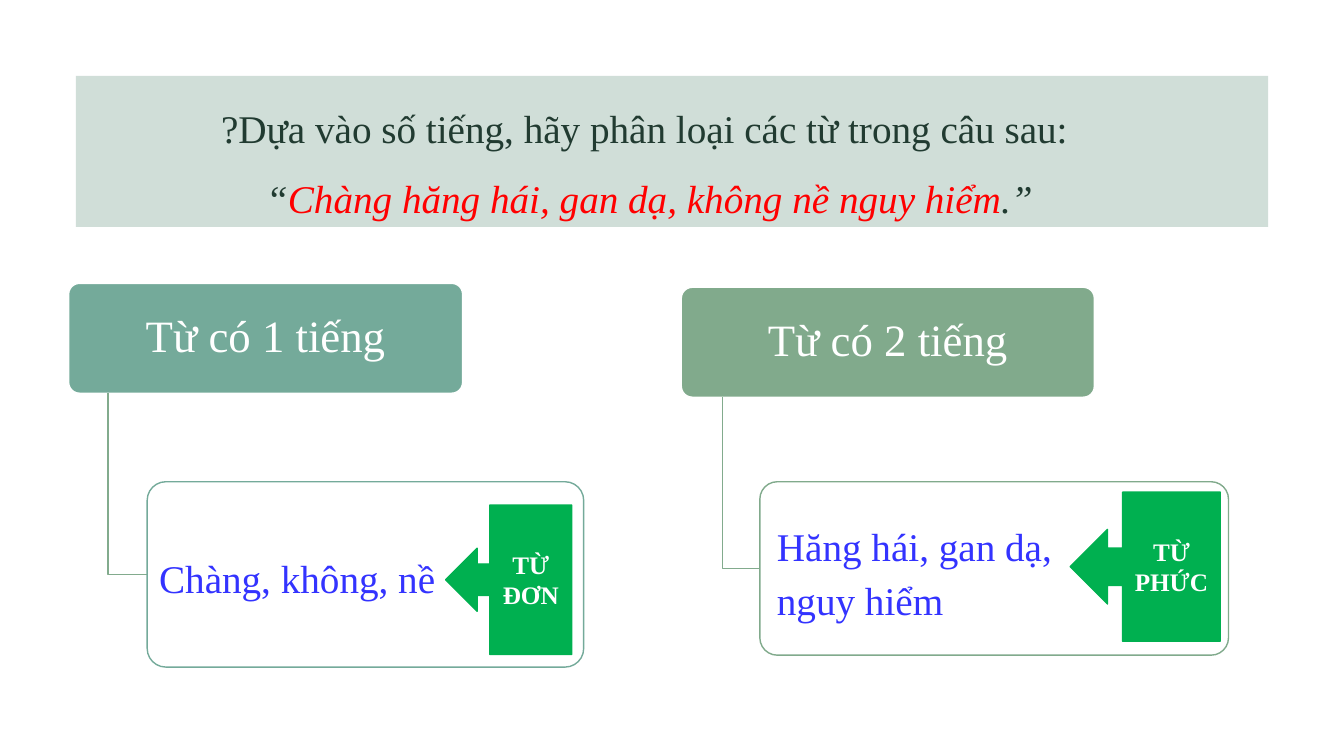
from dataclasses import dataclass

from lxml.etree import SubElement
from pptx import Presentation
from pptx.dml.color import RGBColor
from pptx.enum.shapes import MSO_SHAPE
from pptx.enum.text import MSO_ANCHOR, PP_ALIGN
from pptx.oxml.ns import qn
from pptx.shapes.autoshape import Shape
from pptx.slide import Slide
from pptx.text.text import TextFrame, _Paragraph
from pptx.util import Cm, Pt

FONT = "Times New Roman"
WHITE, GREEN, DARK = "FFFFFF", "00B050", "213B31"
RED, BLUE, ELBOW = "FF0000", "3333FF", "82AB8D"


@dataclass(frozen=True)
class Area:
    """Left, top, width and height in centimetres."""
    left: float
    top: float
    width: float
    height: float

    def lengths(self) -> tuple[Cm, Cm, Cm, Cm]:
        return Cm(self.left), Cm(self.top), Cm(self.width), Cm(self.height)


@dataclass(frozen=True)
class WordGroup:
    title: str
    color: str
    title_area: Area
    detail_area: Area
    words: list[str]
    words_area: Area
    wrap: bool
    kind: str
    kind_area: Area


GROUPS = [
    WordGroup("Từ có 1 tiếng", "74AA9A", Area(1.73, 7.14, 9.93, 2.77),
              Area(3.71, 12.14, 11, 4.67), ["Chàng, không, nề"],
              Area(3.76, 13.97, 7.54, 1.35), False,
              "TỪ ĐƠN", Area(11.23, 12.73, 3.18, 3.76)),
    WordGroup("Từ có 2 tiếng", "81AA8C", Area(17.17, 7.24, 10.41, 2.77),
              Area(19.15, 12.14, 11.81, 4.37), ["Hăng hái, gan dạ,", "nguy hiểm"],
              Area(19.33, 13.16, 8.46, 2.69), True,
              "TỪ PHỨC", Area(26.97, 12.4, 3.78, 3.76)),
]


def rgb(color: str) -> RGBColor:
    return RGBColor.from_string(color)


def add_span(para: _Paragraph, text: str, *, size: float, color: str,
             bold: bool = False, italic: bool = False) -> None:
    span = para.add_run()
    span.text = text
    font = span.font
    font.name, font.size, font.bold, font.italic = FONT, Pt(size), bold, italic
    font.color.rgb = rgb(color)


def add_box(page: Slide, preset: MSO_SHAPE, area: Area, *, fill: str,
            line: str | None = None, opacity: int = 100) -> Shape:
    box = page.shapes.add_shape(preset, *area.lengths())
    box.shadow.inherit = False
    box.fill.solid()
    box.fill.fore_color.rgb = rgb(fill)
    if opacity < 100:
        color = box.fill._xPr.find(qn("a:solidFill"))[0]
        SubElement(color, qn("a:alpha"), val=str(opacity * 1000))
    if line:
        box.line.color.rgb = rgb(line)
        box.line.width = Pt(1)
    else:
        box.line.fill.background()
    if preset == MSO_SHAPE.ROUNDED_RECTANGLE:
        box.adjustments[0] = 0.1
    return box


def add_label(box: Shape, text: str, *, size: float, bold: bool = False,
              spacing: float = 1.0) -> None:
    """Centre white text in a filled shape."""
    frame = box.text_frame
    frame.word_wrap = True
    frame.vertical_anchor = MSO_ANCHOR.MIDDLE
    para = frame.paragraphs[0]
    para.alignment = PP_ALIGN.CENTER
    para.line_spacing = spacing
    add_span(para, text, size=size, color=WHITE, bold=bold)


def add_text_frame(page: Slide, area: Area, *, wrap: bool = True) -> TextFrame:
    frame = page.shapes.add_textbox(*area.lengths()).text_frame
    frame.word_wrap = wrap
    return frame


def add_elbow(page: Slide, title: Area, detail: Area) -> None:
    """Lead from a tenth along the title's bottom to the detail's left middle."""
    left = Cm(title.left + title.width / 10)
    middle = Cm(detail.top + detail.height / 2)
    builder = page.shapes.build_freeform(left, Cm(title.top + title.height))
    builder.add_line_segments([(left, middle), (Cm(detail.left), middle)], close=False)
    elbow = builder.convert_to_shape()
    elbow.shadow.inherit = False
    elbow.fill.background()
    elbow.line.color.rgb = rgb(ELBOW)
    elbow.line.width = Pt(1)


def add_question(page: Slide) -> None:
    add_box(page, MSO_SHAPE.RECTANGLE, Area(1.91, 1.91, 30.05, 3.81),
            fill="447E67", opacity=25)
    frame = add_text_frame(page, Area(3.18, 1.91, 26.37, 4.09))
    question, sentence = frame.paragraphs[0], frame.add_paragraph()
    question.alignment = sentence.alignment = PP_ALIGN.CENTER
    question.line_spacing, sentence.line_spacing = 1.5, 1.2
    sentence.space_before = Pt(10)
    add_span(question, "?Dựa vào số tiếng, hãy phân loại các từ trong câu sau: ",
             size=28, color=DARK)
    for text, color in [("“", DARK),
                        ("Chàng hăng hái, gan dạ, không nề nguy hiểm", RED),
                        (".”", DARK)]:
        add_span(sentence, text, size=28, color=color, italic=True)


def add_group(page: Slide, group: WordGroup) -> None:
    title = add_box(page, MSO_SHAPE.ROUNDED_RECTANGLE, group.title_area,
                    fill=group.color, line=WHITE)
    add_label(title, group.title, size=32, spacing=0.9)
    add_elbow(page, group.title_area, group.detail_area)
    add_box(page, MSO_SHAPE.ROUNDED_RECTANGLE, group.detail_area,
            fill=WHITE, line=group.color, opacity=90)
    callout = add_box(page, MSO_SHAPE.LEFT_ARROW_CALLOUT, group.kind_area,
                      fill=GREEN, line=GREEN)
    add_label(callout, group.kind, size=18, bold=True)
    frame = add_text_frame(page, group.words_area, wrap=group.wrap)
    for index, text in enumerate(group.words):
        para = frame.add_paragraph() if index else frame.paragraphs[0]
        para.line_spacing = 0.9
        para.space_before = Pt(8.4 if index else 0)
        add_span(para, text, size=28, color=BLUE)


def main() -> None:
    deck = Presentation()
    deck.slide_width, deck.slide_height = Cm(33.87), Cm(19.05)
    page = deck.slides.add_slide(deck.slide_layouts[6])
    add_question(page)
    for group in GROUPS:
        add_group(page, group)
    deck.save("out.pptx")


if __name__ == "__main__":
    main()
